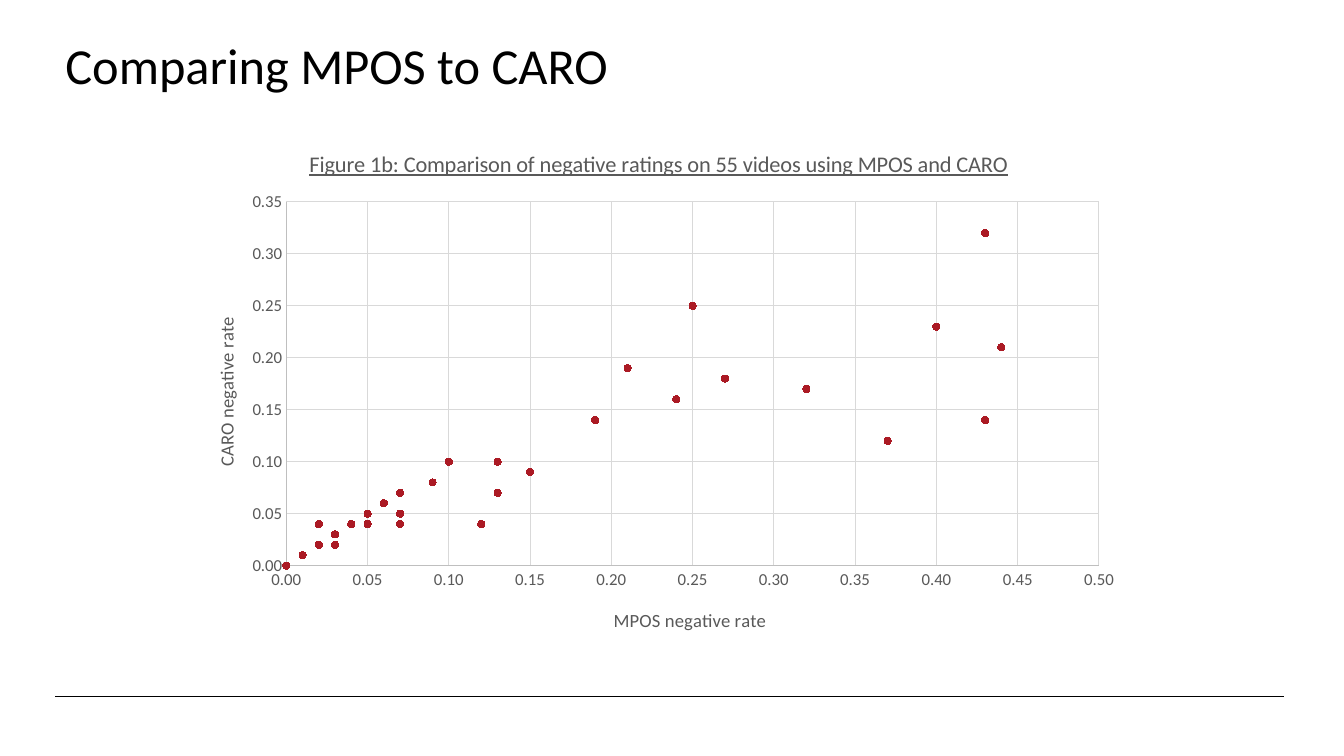
from lxml import etree
from pptx import Presentation
from pptx.chart.data import XyChartData
from pptx.dml.color import RGBColor
from pptx.enum import chart as ch, shapes, text
from pptx.oxml.ns import qn
from pptx.util import Inches, Pt

BLACK = RGBColor(0x00, 0x00, 0x00)
GREY = RGBColor(0x59, 0x59, 0x59)
AXIS_GREY = RGBColor(0xBF, 0xBF, 0xBF)
GRID_GREY = RGBColor(0xD9, 0xD9, 0xD9)
RED = RGBColor(0xAB, 0x1A, 0x24)
FONT = "Calibri"

MPOS_RATES = [
    0, 0.12, 0.43, 0.03, 0.07, 0.13, 0, 0.03, 0.05, 0.02, 0,
    0.02, 0.21, 0.03, 0, 0.07, 0, 0.03, 0.02, 0, 0.32, 0.15,
    0.07, 0, 0.1, 0.09, 0.44, 0.1, 0, 0.25, 0.13, 0.37, 0,
    0, 0.03, 0, 0, 0.02, 0.06, 0.03, 0, 0, 0.24, 0.27,
    0.06, 0, 0, 0.04, 0.01, 0.01, 0.19, 0.05, 0.4, 0.43, 0.04,
]
CARO_RATES = [
    0, 0.04, 0.14, 0.02, 0.04, 0.1, 0, 0.02, 0.05, 0.02, 0,
    0.02, 0.19, 0.03, 0, 0.05, 0, 0.03, 0.04, 0, 0.17, 0.09,
    0.07, 0, 0.1, 0.08, 0.21, 0.1, 0, 0.25, 0.07, 0.12, 0,
    0, 0.03, 0, 0, 0.02, 0.06, 0.03, 0, 0, 0.16, 0.18,
    0.06, 0, 0, 0.04, 0.01, 0.01, 0.14, 0.04, 0.23, 0.32, 0.04,
]


def write(frame, wording, *, size, color=BLACK, underline=False):
    span = frame.paragraphs[0].add_run()
    span.text = wording
    font = span.font
    font.name, font.size, font.bold = FONT, Pt(size), False
    font.underline = underline
    font.color.rgb = color


def style_line(line, color):
    line.color.rgb = color
    line.width = Pt(0.75)


def place(element, index, **fractions):
    """Set a manual layout, in fractions of the chart, at a child index."""
    for old in element.findall(qn("c:layout")):
        element.remove(old)
    layout = etree.Element(qn("c:layout"))
    element.insert(index, layout)
    manual = etree.SubElement(layout, qn("c:manualLayout"))
    settings = {"xMode": "edge", "yMode": "edge", **fractions}
    if "w" in fractions:
        settings = {"layoutTarget": "inner", **settings}
    for name, value in settings.items():
        etree.SubElement(manual, qn(f"c:{name}")).set("val", str(value))


def style_axis(axis, title, top_value, x, y):
    axis.minimum_scale, axis.maximum_scale = 0, top_value
    axis.major_unit = 0.05
    axis.major_tick_mark = axis.minor_tick_mark = ch.XL_TICK_MARK.NONE
    axis.has_major_gridlines = True
    style_line(axis.major_gridlines.format.line, GRID_GREY)
    style_line(axis.format.line, AXIS_GREY)
    labels = axis.tick_labels
    labels.number_format, labels.number_format_is_linked = "0.00", False
    labels.font.name, labels.font.size = FONT, Pt(12)
    labels.font.color.rgb = GREY
    write(axis.axis_title.text_frame, title, size=13.3, color=GREY)
    place(axis.axis_title.element, 1, x=x, y=y)


def add_scatter(page):
    data = XyChartData(number_format="0.00")
    ratings = data.add_series("Series 1")
    for mpos, caro in zip(MPOS_RATES, CARO_RATES):
        ratings.add_data_point(mpos, caro)
    chart = page.shapes.add_chart(
        ch.XL_CHART_TYPE.XY_SCATTER,
        Inches(1.8), Inches(1.23), Inches(9.45), Inches(5.23), data,
    ).chart
    chart.font.name, chart.font.size = FONT, Pt(10)
    chart.has_legend = False
    chart.has_title = True
    write(chart.chart_title.text_frame,
          "Figure 1b: Comparison of negative ratings on 55 videos using MPOS and CARO",
          size=16, color=GREY, underline=True)
    place(chart.chart_title.element, 1, x=0.13, y=0.04)
    style_axis(chart.category_axis, "MPOS negative rate", 0.5, x=0.45, y=0.91)
    style_axis(chart.value_axis, "CARO negative rate", 0.35, x=0.03, y=0.36)
    plot_area = chart.element.find(f".//{qn('c:plotArea')}")
    place(plot_area, 0, x=0.11, y=0.148, w=0.853, h=0.69)

    chart.plots[0].vary_by_categories = False
    series = chart.plots[0].series[0]
    series.smooth = False
    series.format.line.fill.background()
    marker = series.marker
    marker.style, marker.size = ch.XL_MARKER_STYLE.CIRCLE, 5
    marker.format.fill.solid()
    marker.format.fill.fore_color.rgb = RED
    style_line(marker.format.line, RED)


def add_title(page, wording):
    box = page.shapes.add_textbox(Inches(0.55), Inches(0.28), Inches(9.33), Inches(0.71))
    frame = box.text_frame
    frame.word_wrap = True
    frame.vertical_anchor = text.MSO_ANCHOR.MIDDLE
    write(frame, wording, size=36)


def add_footer_rule(page):
    rule = page.shapes.add_connector(
        shapes.MSO_CONNECTOR.STRAIGHT,
        Inches(0.55), Inches(6.91), Inches(12.73), Inches(6.91))
    style_line(rule.line, BLACK)
    etree.SubElement(rule.element.spPr, qn("a:effectLst"))


def main():
    deck = Presentation()
    deck.slide_width, deck.slide_height = Inches(13.33), Inches(7.5)
    page = deck.slides.add_slide(deck.slide_layouts[6])
    add_footer_rule(page)
    add_scatter(page)
    add_title(page, "Comparing MPOS to CARO")
    deck.save("out.pptx")


if __name__ == "__main__":
    main()
